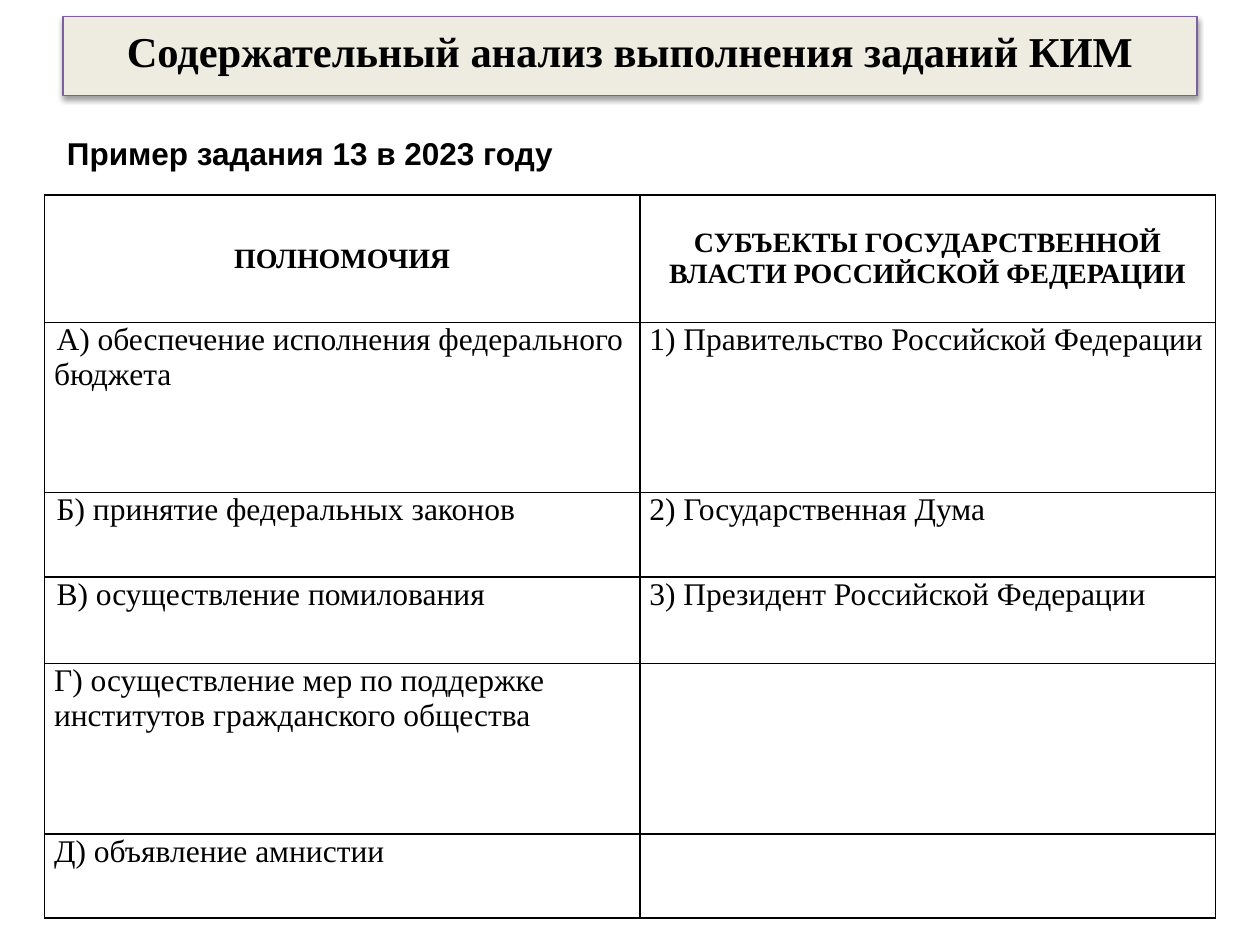
from lxml import etree
from pptx import Presentation
from pptx.dml.color import RGBColor
from pptx.enum.text import MSO_ANCHOR, MSO_AUTO_SIZE, PP_ALIGN
from pptx.oxml.ns import qn
from pptx.util import Cm, Pt

BLACK = RGBColor(0x00, 0x00, 0x00)
CREAM = RGBColor(0xEE, 0xEC, 0xE1)
PURPLE = RGBColor(0x7D, 0x60, 0xA0)
LEFT, CENTER, JUSTIFY = PP_ALIGN.LEFT, PP_ALIGN.CENTER, PP_ALIGN.JUSTIFY
TOP, MIDDLE = MSO_ANCHOR.TOP, MSO_ANCHOR.MIDDLE
TITLE_ONLY = 5


def write(frame, text, size=18, font="Times New Roman", bold=False, align=LEFT, indent=0):
    paragraph = frame.paragraphs[0]
    paragraph.alignment = align
    if indent:
        paragraph._p.get_or_add_pPr().set("indent", str(indent))
    run = paragraph.add_run()
    run.text = text
    run.font.size = Pt(size)
    run.font.name = font
    run.font.bold = bold
    run.font.color.rgb = BLACK


def add_borders(cell):
    """Draw a thin black line on all four sides of the cell."""
    properties = cell._tc.get_or_add_tcPr()
    for side in ("a:lnL", "a:lnR", "a:lnT", "a:lnB"):
        line = etree.SubElement(properties, qn(side), w=str(Pt(1)))
        fill = etree.SubElement(line, qn("a:solidFill"))
        etree.SubElement(fill, qn("a:srgbClr"), val=str(BLACK))


prs = Presentation()
prs.slide_width, prs.slide_height = Cm(25.4), Cm(19.05)
slide = prs.slides.add_slide(prs.slide_layouts[TITLE_ONLY])

# Title bar
title = slide.shapes.title
title.left, title.top, title.width, title.height = Cm(1.27), Cm(0.33), Cm(22.86), Cm(1.6)
title.fill.solid()
title.fill.fore_color.rgb = CREAM
title.line.color.rgb = PURPLE
title.line.width = Pt(0.75)
effects = etree.SubElement(title._element.spPr, qn("a:effectLst"))
shadow = etree.SubElement(effects, qn("a:outerShdw"), blurRad=str(Pt(3.1)),
                          dist=str(Pt(1.6)), dir="5400000", rotWithShape="0")
shadow_color = etree.SubElement(shadow, qn("a:srgbClr"), val=str(BLACK))
etree.SubElement(shadow_color, qn("a:alpha"), val="38000")
heading = title.text_frame
heading.auto_size = MSO_AUTO_SIZE.NONE
heading.vertical_anchor = MIDDLE
heading.margin_bottom = Cm(0.35)
write(heading, "Содержательный анализ выполнения заданий КИМ", size=24.3, bold=True, align=CENTER)

# Subtitle
subtitle = slide.shapes.add_textbox(Cm(1.1), Cm(2.57), Cm(24.3), Cm(1.02)).text_frame
subtitle.word_wrap = True
subtitle.vertical_anchor = MIDDLE
write(subtitle, "Пример задания 13 в 2023 году", font="Arial", bold=True, align=JUSTIFY)

# Matching table
ROWS = [
    ("ПОЛНОМОЧИЯ", "СУБЪЕКТЫ ГОСУДАРСТВЕННОЙ ВЛАСТИ РОССИЙСКОЙ ФЕДЕРАЦИИ"),
    ("А) обеспечение исполнения федерального бюджета", "1) Правительство Российской Федерации"),
    ("Б) принятие федеральных законов", "2) Государственная Дума"),
    ("В) осуществление помилования", "3) Президент Российской Федерации"),
    ("Г) осуществление мер по поддержке институтов гражданского общества", ""),
    ("Д) объявление амнистии", ""),
]
COLUMN_WIDTHS = [12, 11.6]
ROW_HEIGHTS = [2.57, 3.43, 1.7, 1.75, 3.43, 1.7]
INDENTED_ROWS = (1, 2, 3)

table = slide.shapes.add_table(len(ROWS), len(COLUMN_WIDTHS), Cm(0.9), Cm(3.93),
                               Cm(sum(COLUMN_WIDTHS)), Cm(sum(ROW_HEIGHTS))).table
table.first_row = table.horz_banding = False
for column, width in zip(table.columns, COLUMN_WIDTHS):
    column.width = Cm(width)

for r, (texts, height) in enumerate(zip(ROWS, ROW_HEIGHTS)):
    table.rows[r].height = Cm(height)
    for c, text in enumerate(texts):
        cell = table.cell(r, c)
        add_borders(cell)
        cell.fill.background()
        cell.margin_left = cell.margin_right = Cm(0.19)
        cell.margin_top = cell.margin_bottom = 0
        cell.vertical_anchor = MIDDLE if r == 0 else TOP
        if r == 0:
            write(cell.text_frame, text, size=16, bold=True, align=CENTER)
        elif text:
            indent = Cm(0.05) if c == 0 and r in INDENTED_ROWS else 0
            write(cell.text_frame, text, indent=indent)

prs.save("out.pptx")
